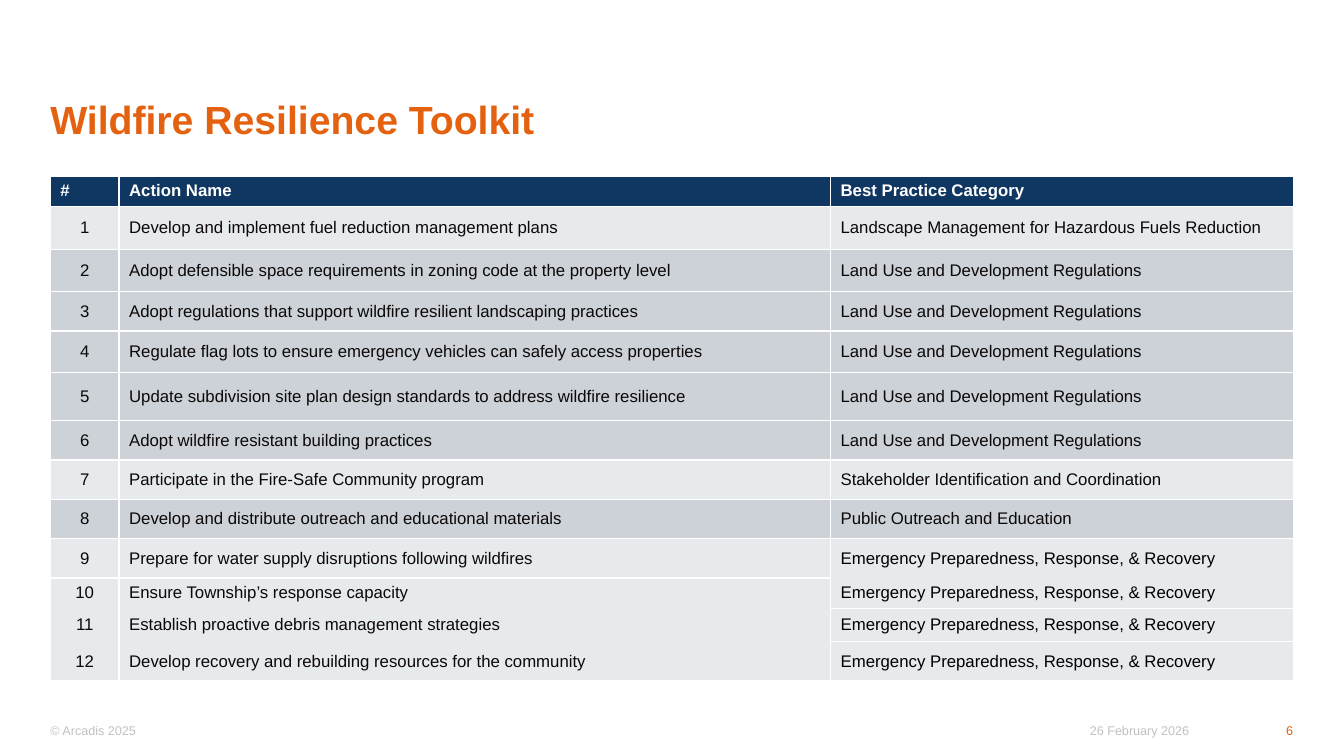
"""Build the Wildfire Resilience Toolkit slide."""
from pptx import Presentation
from pptx.dml.color import RGBColor
from pptx.enum.text import MSO_ANCHOR as Anchor, PP_ALIGN as Align
from pptx.util import Cm, Pt

COLORS = {"orange": "E4610F", "navy": "103762", "light": "E7EAED", "dark": "CCD2D8",
          "grey": "C2C1C1", "white": "FFFFFF", "ink": "0C0808", "black": "000000"}
TITLE = "Wildfire Resilience Toolkit"
HEADER = ("#", "Action Name", "Best Practice Category")
LAND_USE = "Land Use and Development Regulations"
EMERGENCY = "Emergency Preparedness, Response, & Recovery"
ACTIONS = [
    ("Develop and implement fuel reduction management plans",
     "Landscape Management for Hazardous Fuels Reduction"),
    ("Adopt defensible space requirements in zoning code at the property level", LAND_USE),
    ("Adopt regulations that support wildfire resilient landscaping practices", LAND_USE),
    ("Regulate flag lots to ensure emergency vehicles can safely access properties", LAND_USE),
    ("Update subdivision site plan design standards to address wildfire resilience", LAND_USE),
    ("Adopt wildfire resistant building practices", LAND_USE),
    ("Participate in the Fire-Safe Community program",
     "Stakeholder Identification and Coordination"),
    ("Develop and distribute outreach and educational materials",
     "Public Outreach and Education"),
    ("Prepare for water supply disruptions following wildfires", EMERGENCY),
    ("Ensure Township’s response capacity", EMERGENCY),
    ("Establish proactive debris management strategies", EMERGENCY),
    ("Develop recovery and rebuilding resources for the community", EMERGENCY),
]
DARK_ROWS = {2, 3, 4, 5, 6, 8}
COL_WIDTHS = (1.73, 17.93, 11.66)
ROW_HEIGHTS = (0.66, 1.07, 1.07, 0.99, 1.04, 1.22, 0.99, 0.99, 0.99, 0.99,
               0, 0.74, 0, 0.84, 0, 0.99)
ACTION_STARTS = [*range(1, 10), 11, 12, 14]
CATEGORY_STARTS = [*range(1, 10), 10, 13, 15]
MARGIN, WIDTH = 1.27, 31.32
FOOTERS = [
    ("26 February 2026", 25.2, 4.77, "grey", Align.RIGHT),
    ("© Arcadis 2025", MARGIN, 4.65, "grey", Align.LEFT),
    ("6", 30.58, 2.01, "orange", Align.RIGHT),
]


def rgb(name):
    return RGBColor.from_string(COLORS[name])


def put_text(tf, text, size=12, color="ink", bold=False, align=Align.LEFT, spacing=None):
    p = tf.paragraphs[0]
    p.alignment = align
    if spacing:
        p.line_spacing = spacing
    r = p.add_run()
    r.text = text
    r.font.name, r.font.size, r.font.bold = "Arial", Pt(size), bold
    r.font.color.rgb = rgb(color)


def clear_insets(tf, anchor):
    tf.margin_left = tf.margin_top = tf.margin_right = tf.margin_bottom = 0
    tf.word_wrap = True
    tf.vertical_anchor = anchor


def add_title(slide):
    sp = slide.shapes.title
    sp.left, sp.top, sp.width, sp.height = Cm(MARGIN), Cm(2.54), Cm(WIDTH), Cm(1.9)
    clear_insets(sp.text_frame, Anchor.TOP)
    put_text(sp.text_frame, TITLE, size=28, color="orange", bold=True, spacing=0.9)


def add_footers(slide):
    for text, left, width, color, align in FOOTERS:
        sp = slide.shapes.add_textbox(Cm(left), Cm(17.91), Cm(width), Cm(1.02))
        clear_insets(sp.text_frame, Anchor.MIDDLE)
        put_text(sp.text_frame, text, size=9, color=color, align=align)


def add_actions_table(slide):
    rows = len(ROW_HEIGHTS)
    table = slide.shapes.add_table(rows, len(COL_WIDTHS), Cm(MARGIN), Cm(4.45),
                                   Cm(WIDTH), Cm(sum(ROW_HEIGHTS))).table
    table.horz_banding = False
    for col, width in zip(table.columns, COL_WIDTHS):
        col.width = Cm(width)
    for i, height in enumerate(ROW_HEIGHTS):
        table.rows[i].height = Cm(height)
        for cell in table.rows[i].cells:
            cell.fill.solid()
            cell.fill.fore_color.rgb = rgb(
                "navy" if i == 0 else "dark" if i in DARK_ROWS else "light")
    for c, text in enumerate(HEADER):
        put_text(table.cell(0, c).text_frame, text, color="white", bold=True)

    numbers = [str(n) for n in range(1, len(ACTIONS) + 1)]
    names, categories = zip(*ACTIONS)
    columns = [(numbers, ACTION_STARTS, Align.CENTER), (names, ACTION_STARTS, Align.LEFT),
               (categories, CATEGORY_STARTS, Align.LEFT)]
    for c, (texts, starts, align) in enumerate(columns):
        for text, first, after in zip(texts, starts, starts[1:] + [rows]):
            cell = table.cell(first, c)
            if after - first > 1:
                cell.merge(table.cell(after - 1, c))
            cell.vertical_anchor = Anchor.MIDDLE
            put_text(cell.text_frame, text, align=align,
                     color="black" if text == EMERGENCY else "ink")


def main():
    prs = Presentation()
    prs.slide_width, prs.slide_height = Cm(33.87), Cm(19.05)
    slide = prs.slides.add_slide(prs.slide_layouts[5])
    add_title(slide)
    add_footers(slide)
    add_actions_table(slide)
    prs.save("out.pptx")


if __name__ == "__main__":
    main()
